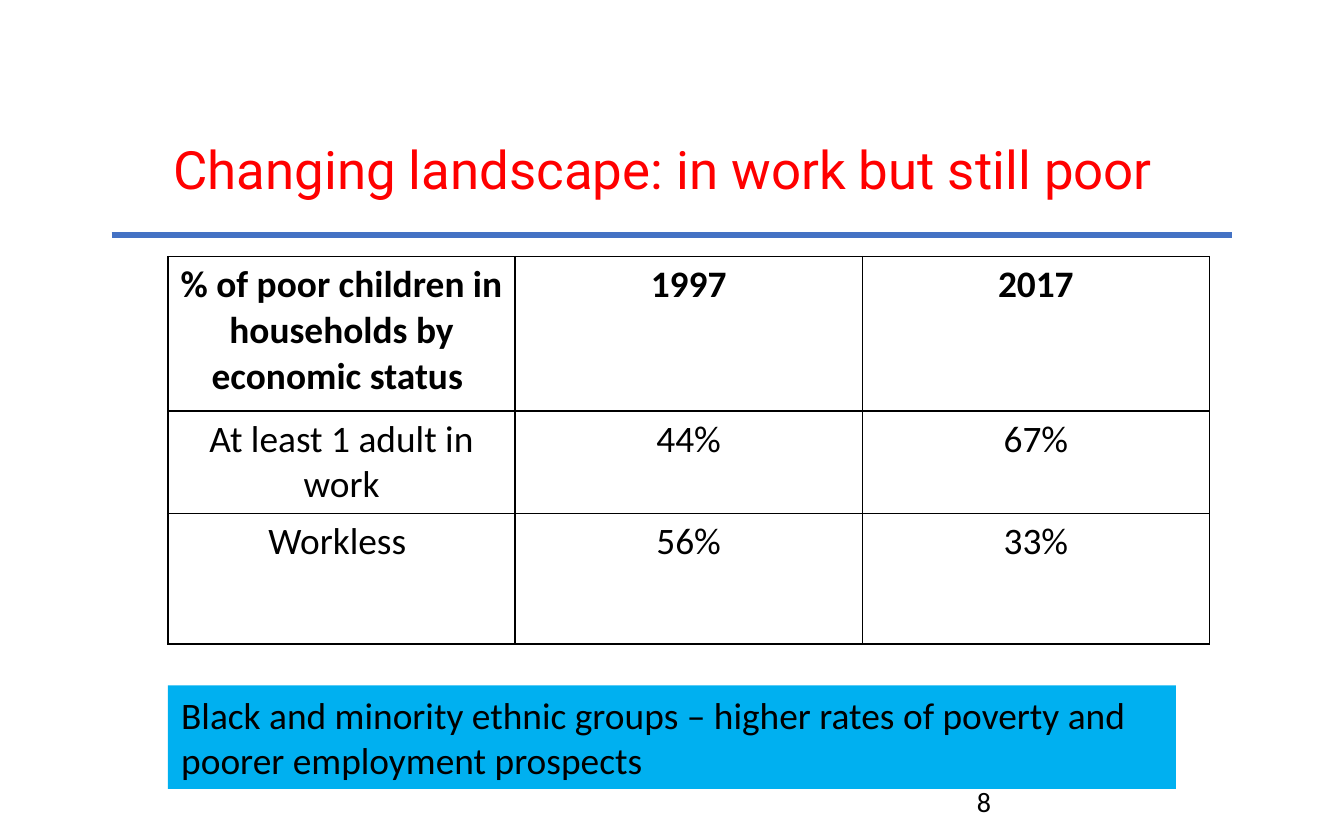
from lxml import etree
from pptx import Presentation
from pptx import util as u
from pptx.dml.color import RGBColor
from pptx.enum import shapes, text
from pptx.oxml.ns import qn

BLACK, RED, BLUE, CYAN = "000000", "FF0000", "4472C4", "00B0F0"
ROWS = [
    ["% of poor children in households by economic status ", "1997", "2017"],
    ["At least 1 adult in work", "44%", "67%"],
    ["Workless ", "56%", "33%"],
]


def paint(color):
    return RGBColor.from_string(color)


def place(*sizes):
    return [u.Inches(size) for size in sizes]


class Deck:
    font = "Calibri"
    size = 20

    def __init__(self, wide, high):
        self.file = Presentation()
        self.file.slide_width, self.file.slide_height = place(wide, high)
        self.slide = self.file.slides.add_slide(self.file.slide_layouts[5])
        self.shapes = self.slide.shapes

    def letter(self, frame, words, color=BLACK, align=text.PP_ALIGN.LEFT, **form):
        """Put one styled run in the first paragraph and return the paragraph."""
        frame.word_wrap = True
        para = frame.paragraphs[0]
        para.alignment = align
        run = para.add_run()
        run.text = words
        look = {"name": self.font, "size": u.Pt(self.size), "bold": False, **form}
        for key, value in look.items():
            setattr(run.font, key, value)
        run.font.color.rgb = paint(color)
        return para

    def title(self, words, at):
        shape = self.shapes.title
        shape.left, shape.top, shape.width, shape.height = place(*at)
        frame = shape.text_frame
        frame.auto_size = text.MSO_AUTO_SIZE.NONE
        frame.vertical_anchor = text.MSO_ANCHOR.TOP
        frame.margin_top = u.Inches(0.07)
        para = self.letter(frame, words, RED, name="Roboto", size=u.Pt(28.3))
        para.line_spacing = 0.9

    def rule(self, start, end, color, width):
        line = self.shapes.add_connector(
            shapes.MSO_CONNECTOR.STRAIGHT, *place(*start, *end))
        line.line.color.rgb = paint(color)
        line.line.width = u.Pt(width)
        etree.SubElement(line._element.spPr, qn("a:effectLst"))

    def panel(self, words, at, color):
        shape = self.shapes.add_shape(shapes.MSO_SHAPE.RECTANGLE, *place(*at))
        shape.shadow.inherit = False
        shape.fill.solid()
        shape.fill.fore_color.rgb = paint(color)
        shape.line.fill.background()
        self.letter(shape.text_frame, words)

    def label(self, words, at, size):
        box = self.shapes.add_textbox(*place(*at))
        self.letter(box.text_frame, words, size=u.Pt(size))

    def border(self, cell, color, width):
        props = cell._tc.get_or_add_tcPr()
        for spot, side in enumerate(("lnL", "lnR", "lnT", "lnB")):
            line = etree.Element(qn(f"a:{side}"), w=str(u.Pt(width)))
            fill = etree.SubElement(line, qn("a:solidFill"))
            etree.SubElement(fill, qn("a:srgbClr"), val=color)
            props.insert(spot, line)

    def table(self, rows, at, heights):
        grid = self.shapes.add_table(len(rows), len(rows[0]), *place(*at)).table
        for row, height in zip(grid.rows, heights):
            row.height = u.Inches(height)
        margins = {"margin_left": 0.08, "margin_right": 0.08,
                   "margin_top": 0.04, "margin_bottom": 0.04}
        for r, row in enumerate(rows):
            for c, words in enumerate(row):
                cell = grid.cell(r, c)
                for key, value in margins.items():
                    setattr(cell, key, u.Inches(value))
                cell.fill.background()
                self.border(cell, BLACK, 1)
                self.letter(cell.text_frame, words,
                            align=text.PP_ALIGN.CENTER, bold=r == 0)


def main():
    deck = Deck(10, 6.25)
    deck.title("Changing landscape: in work but still poor", (1.19, 1, 7.62, 0.64))
    deck.rule((0.83, 1.75), (9.17, 1.75), BLUE, 3)
    deck.panel("Black and minority ethnic groups – higher rates of poverty "
               "and poorer employment prospects", (1.25, 5.1, 7.5, 0.77), CYAN)
    deck.table(ROWS, (1.25, 1.91, 7.75, 2.87), (1.15, 0.75, 0.97))
    deck.label("8", (7.17, 5.79, 2.33, 0.33), 15)
    deck.file.save("out.pptx")


if __name__ == "__main__":
    main()
